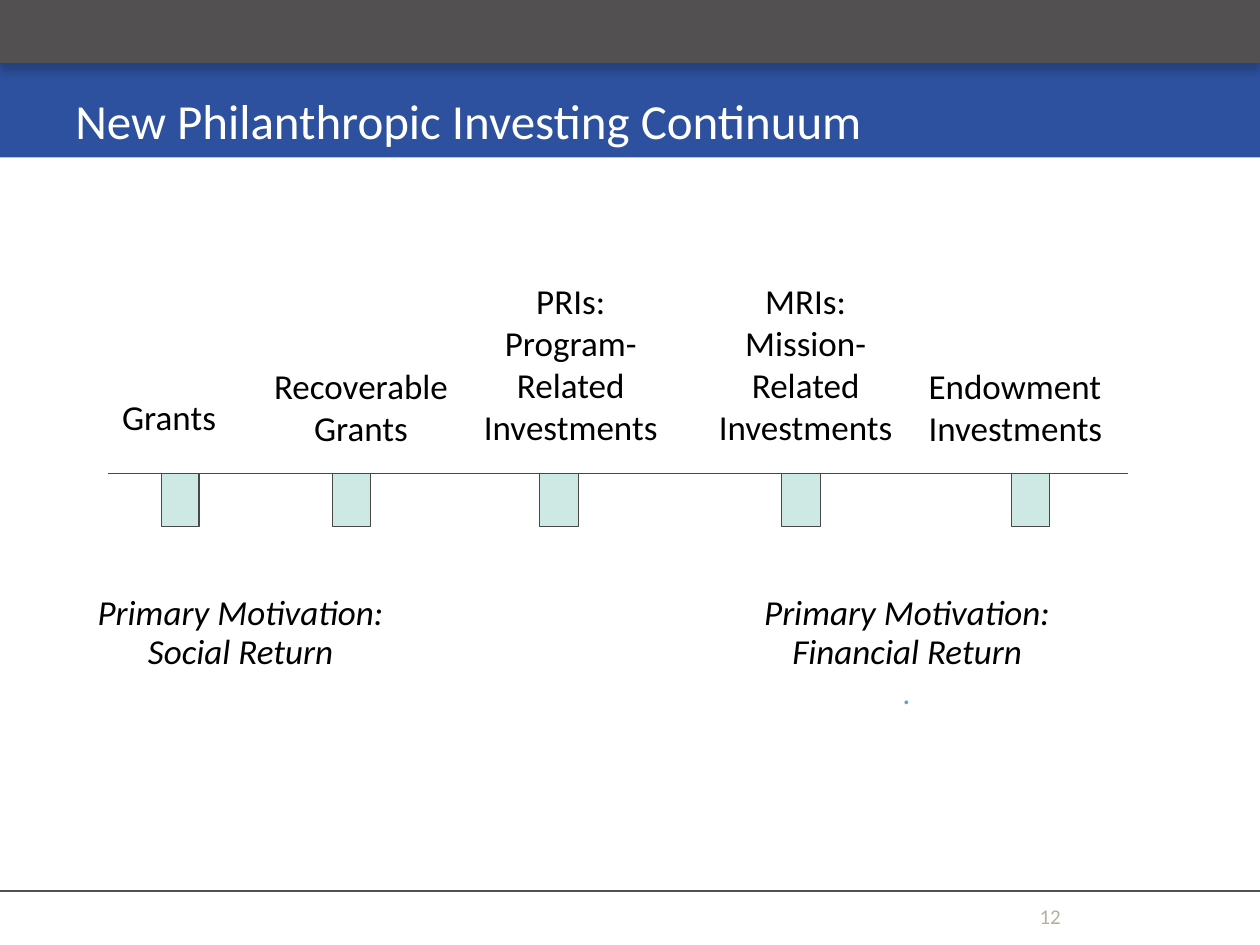
from dataclasses import dataclass

from lxml import etree
from pptx import Presentation
from pptx import util as u
from pptx.dml.color import RGBColor
from pptx.enum import shapes, text
from pptx.oxml import parse_xml
from pptx.oxml.ns import nsdecls, qn

COLORS = {
    "blue": "2D519E", "gray": "525051", "axis": "494848", "marker": "3CA597",
    "text": "000000", "title": "FFFFFF", "number": "B4B1A0", "dot": "5FA2C3",
}
FONT = "Calibri"
AXIS_Y = 270.7
MARKER_H = 30.2
LEFT, CENTER = text.PP_ALIGN.LEFT, text.PP_ALIGN.CENTER
TOP, MIDDLE, BOTTOM = (text.MSO_ANCHOR.TOP, text.MSO_ANCHOR.MIDDLE,
                       text.MSO_ANCHOR.BOTTOM)


@dataclass
class Box:
    x: float
    y: float
    w: float
    h: float


@dataclass
class Line:
    words: str
    size: float = 20
    color: str = "text"
    italic: bool = False


@dataclass
class Stage:
    label: str
    box: Box
    marker_x: float
    marker_w: float = 21.6
    align: text.PP_ALIGN = CENTER


@dataclass
class Motivation:
    box: Box
    lines: list[Line]


STAGES = [
    Stage("Grants", Box(61.9, 222.5, 84.2, 31.7), 92.2, align=LEFT),
    Stage("Recoverable Grants", Box(140.4, 204.5, 131.8, 55.4), 190.1),
    Stage("PRIs: Program- Related Investments",
          Box(259.9, 156.2, 132.5, 103.7), 308.2, 22.3),
    Stage("MRIs: Mission- Related Investments",
          Box(396.7, 156.2, 127.4, 129.6), 446.4, 22.3),
    Stage("Endowment Investments", Box(522.7, 204.5, 133.2, 56.2), 578.2,
          align=LEFT),
]
MOTIVATIONS = [
    Motivation(Box(32.4, 312.5, 210.2, 69.1), [
        Line("Primary Motivation:", italic=True),
        Line("Social Return", italic=True)]),
    Motivation(Box(374.4, 312.5, 288, 88.6), [
        Line("Primary Motivation:", italic=True),
        Line("Financial Return", italic=True),
        Line(".", 18, "dot", True)]),
]


def rgb(name: str) -> RGBColor:
    return RGBColor.from_string(COLORS[name])


def pts(box: Box) -> list[u.Pt]:
    return [u.Pt(v) for v in (box.x, box.y, box.w, box.h)]


def add_rect(s, box: Box, fill: str):
    sp = s.shapes.add_shape(shapes.MSO_SHAPE.RECTANGLE, *pts(box))
    sp.shadow.inherit = False
    sp.fill.solid()
    sp.fill.fore_color.rgb = rgb(fill)
    sp.line.fill.background()
    return sp


def add_drop_shadow(sp) -> None:
    effects = sp._element.spPr.find(qn("a:effectLst"))
    effects.append(parse_xml(
        f'<a:outerShdw {nsdecls("a")} blurRad="{u.Pt(5)}" dist="{u.Pt(4.3)}" '
        'dir="5400000" rotWithShape="0"><a:srgbClr val="000000">'
        '<a:alpha val="20000"/></a:srgbClr></a:outerShdw>'))


def add_marker(s, x: float, w: float) -> None:
    """Hang a translucent outlined box below the continuum line."""
    sp = add_rect(s, Box(x, AXIS_Y, w, MARKER_H), "marker")
    color = sp._element.spPr.find(qn("a:solidFill"))[0]
    etree.SubElement(color, qn("a:alpha")).set("val", "25000")
    sp.line.color.rgb = rgb("axis")
    sp.line.width = u.Pt(0.75)


def add_rule(s, x1: float, x2: float, y: float, color: str, width: float) -> None:
    cn = s.shapes.add_connector(shapes.MSO_CONNECTOR.STRAIGHT,
                                u.Pt(x1), u.Pt(y), u.Pt(x2), u.Pt(y))
    cn.line.color.rgb = rgb(color)
    cn.line.width = u.Pt(width)
    etree.SubElement(cn._element.spPr, qn("a:effectLst"))


def add_text(s, box: Box, lines: list[Line], align=LEFT, anchor=TOP,
             side: float = 7.92, top: float = 3.6, pitch: float | None = None) -> None:
    """Write one paragraph per line; pitch is an exact line height."""
    tf = s.shapes.add_textbox(*pts(box)).text_frame
    frame = {"word_wrap": True, "vertical_anchor": anchor,
             "margin_left": u.Pt(side), "margin_right": u.Pt(side),
             "margin_top": u.Pt(top), "margin_bottom": u.Pt(3.6)}
    for name, value in frame.items():
        setattr(tf, name, value)
    for i, line in enumerate(lines):
        p = tf.add_paragraph() if i else tf.paragraphs[0]
        p.alignment = align
        if pitch:
            p.line_spacing = u.Pt(pitch)
        r = p.add_run()
        r.text = line.words
        style = {"name": FONT, "size": u.Pt(line.size), "italic": line.italic}
        for name, value in style.items():
            setattr(r.font, name, value)
        r.font.color.rgb = rgb(line.color)


def main() -> None:
    prs = Presentation()
    prs.slide_width, prs.slide_height = u.Pt(720), u.Pt(540)
    s = prs.slides.add_slide(prs.slide_layouts[6])

    add_rect(s, Box(0, 0, 720, 90), "blue")
    add_drop_shadow(add_rect(s, Box(0, 0, 720, 36), "gray"))
    add_rule(s, 0, 720, 509, "gray", 1)
    add_text(s, Box(36, 46.8, 648, 43.2),
             [Line("New Philanthropic Investing Continuum", 28, "title")],
             anchor=MIDDLE, side=7.2)
    add_text(s, Box(516.2, 505.4, 167.8, 28.8), [Line("12", 12, "number")],
             CENTER, BOTTOM, side=7.2)

    for motivation in MOTIVATIONS:
        add_text(s, motivation.box, motivation.lines, CENTER, top=26.7, pitch=22.4)
    add_rule(s, 61.9, 644.4, AXIS_Y, "axis", 0.75)
    for stage in STAGES:
        add_text(s, stage.box, [Line(stage.label)], stage.align)
        add_marker(s, stage.marker_x, stage.marker_w)

    prs.save("out.pptx")


if __name__ == "__main__":
    main()
